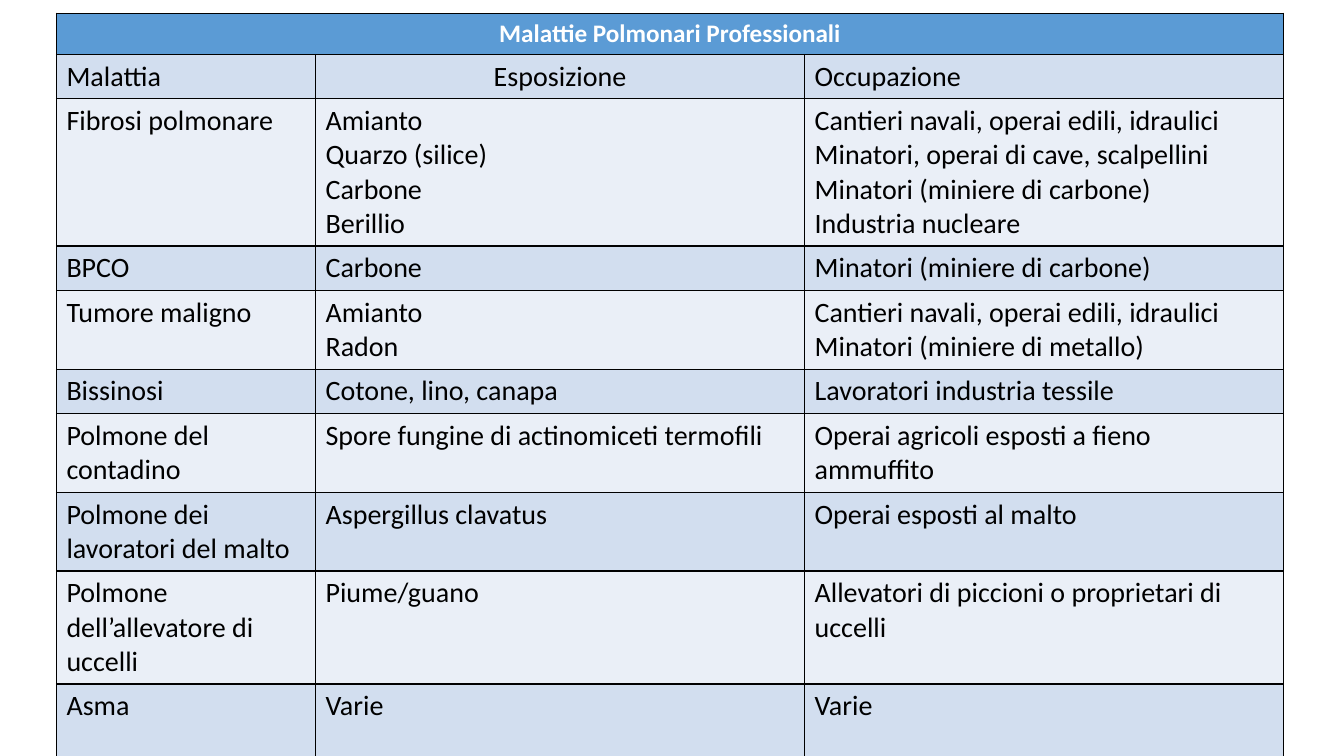
from dataclasses import dataclass

from lxml import etree
from pptx import Presentation
from pptx.dml.color import RGBColor
from pptx.enum.text import PP_ALIGN
from pptx.oxml.ns import qn
from pptx.util import Inches, Pt

LEFT, CENTER = PP_ALIGN.LEFT, PP_ALIGN.CENTER


@dataclass(frozen=True)
class Theme:
    font: str = "Calibri"
    title_size: int = 18
    body_size: int = 20
    title_text: str = "FFFFFF"
    body_text: str = "000000"
    title_fill: str = "5B9BD5"
    bands: tuple = ("D2DEEF", "EAEFF7")
    border: str = "000000"
    border_width: int = 1


THEME = Theme()

TITLE = "Malattie Polmonari Professionali"
COL_WIDTHS = (2.57, 4.85, 4.75)
TITLE_HEIGHT = 0.41

# Row height, then disease, exposures and occupations (one line per paragraph)
ROWS = [
    (0.43, "Malattia", "Esposizione", "Occupazione"),
    (1.43, "Fibrosi polmonare",
     "Amianto\nQuarzo (silice)\nCarbone\nBerillio",
     "Cantieri navali, operai edili, idraulici\n"
     "Minatori, operai di cave, scalpellini\n"
     "Minatori (miniere di carbone)\nIndustria nucleare"),
    (0.43, "BPCO", "Carbone", "Minatori (miniere di carbone)"),
    (0.77, "Tumore maligno", "Amianto\nRadon",
     "Cantieri navali, operai edili, idraulici\nMinatori (miniere di metallo)"),
    (0.43, "Bissinosi", "Cotone, lino, canapa", "Lavoratori industria tessile"),
    (0.77, "Polmone del contadino", "Spore fungine di actinomiceti termofili",
     "Operai agricoli esposti a fieno ammuffito"),
    (0.77, "Polmone dei lavoratori del malto", "Aspergillus clavatus",
     "Operai esposti al malto"),
    (1.1, "Polmone dell’allevatore di uccelli", "Piume/guano",
     "Allevatori di piccioni o proprietari di uccelli"),
    (0.77, "Asma", "Varie", "Varie"),
]


def style_cell(cell, fill):
    """Draw the four borders, then fill the cell."""
    tcPr = cell._tc.get_or_add_tcPr()
    for side in ("a:lnL", "a:lnR", "a:lnT", "a:lnB"):
        ln = etree.SubElement(tcPr, qn(side), w=str(Pt(THEME.border_width)))
        solid = etree.SubElement(ln, qn("a:solidFill"))
        etree.SubElement(solid, qn("a:srgbClr"), val=THEME.border)
    cell.fill.solid()
    cell.fill.fore_color.rgb = RGBColor.from_string(fill)


def write_cell(cell, text, size, color, align=LEFT, bold=False):
    tf = cell.text_frame
    for i, line in enumerate(text.split("\n")):
        p = tf.add_paragraph() if i else tf.paragraphs[0]
        p.alignment = align
        r = p.add_run()
        r.text = line
        r.font.name = THEME.font
        r.font.size = Pt(size)
        r.font.bold = bold
        r.font.color.rgb = RGBColor.from_string(color)


def add_disease_table(s, left, top, width, height):
    frame = s.shapes.add_table(len(ROWS) + 1, len(COL_WIDTHS), Inches(left),
                               Inches(top), Inches(width), Inches(height))
    table = frame.table
    for column, w in zip(table.columns, COL_WIDTHS):
        column.width = Inches(w)

    # Title row across all columns
    table.rows[0].height = Inches(TITLE_HEIGHT)
    for cell in table.rows[0].cells:
        style_cell(cell, THEME.title_fill)
    title = table.cell(0, 0)
    title.merge(table.cell(0, len(COL_WIDTHS) - 1))
    write_cell(title, TITLE, THEME.title_size, THEME.title_text, CENTER, True)

    # Column headings and diseases in alternating bands
    for i, (row_height, *texts) in enumerate(ROWS):
        row = table.rows[i + 1]
        row.height = Inches(row_height)
        for j, (cell, text) in enumerate(zip(row.cells, texts)):
            style_cell(cell, THEME.bands[i % 2])
            align = CENTER if (i, j) == (0, 1) else LEFT
            write_cell(cell, text, THEME.body_size, THEME.body_text, align)


def main():
    prs = Presentation()
    prs.slide_width, prs.slide_height = Inches(13.33), Inches(7.5)
    s = prs.slides.add_slide(prs.slide_layouts[6])
    row_heights = [row[0] for row in ROWS]
    add_disease_table(s, 0.56, 0.13, sum(COL_WIDTHS),
                      TITLE_HEIGHT + sum(row_heights))
    prs.save("out.pptx")


if __name__ == "__main__":
    main()
